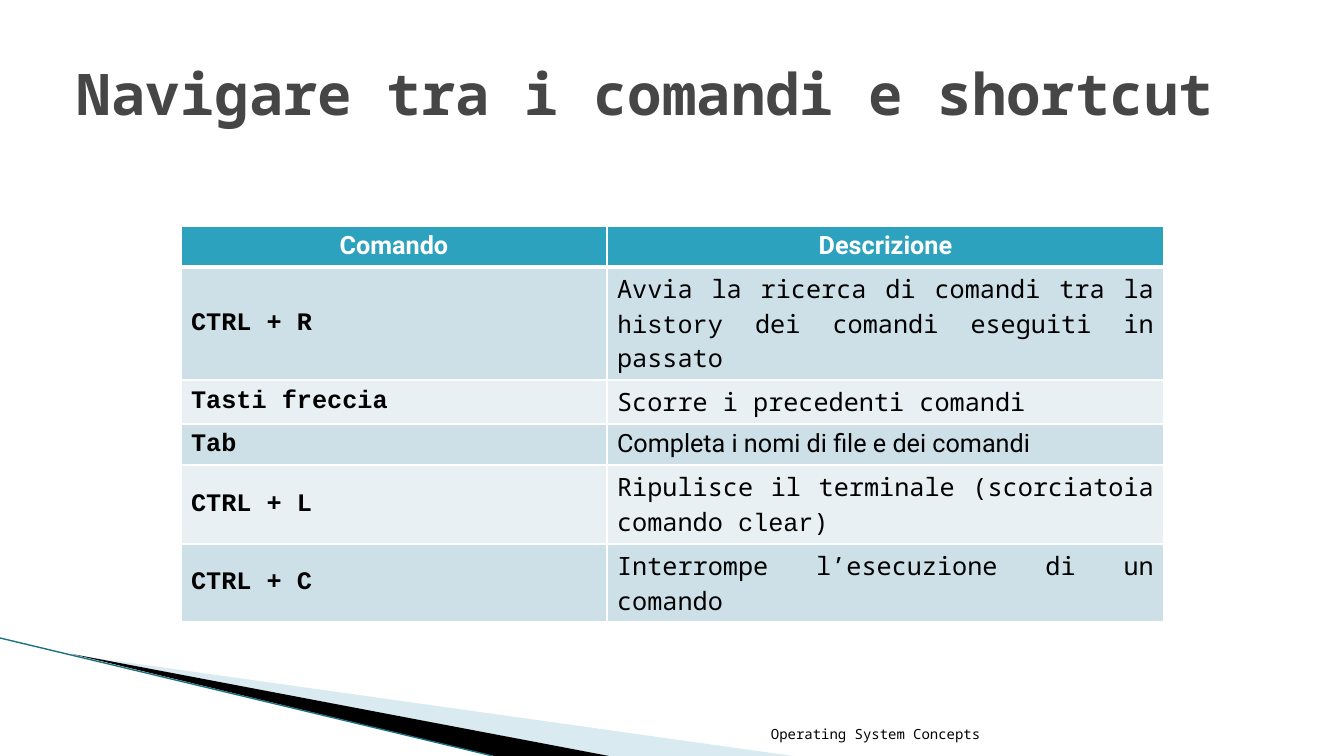
import pptx
import pptx.dml.color
import pptx.enum.shapes
import pptx.enum.text
import pptx.oxml
import pptx.oxml.ns
import pptx.util
from lxml import etree

RGB = pptx.dml.color.RGBColor
ALIGN = pptx.enum.text.PP_ALIGN
ANCHOR = pptx.enum.text.MSO_ANCHOR

WHITE = RGB(0xFF, 0xFF, 0xFF)
BLACK = RGB(0x00, 0x00, 0x00)
GREY = RGB(0x46, 0x46, 0x46)
TEAL = RGB(0x2D, 0xA2, 0xBF)
DARK_TEAL = RGB(0x1B, 0x70, 0x82)
PALE_BLUE = RGB(0xA0, 0xCB, 0xDC)
BANDS = [RGB(0xCD, 0xE0, 0xE8), RGB(0xE8, 0xF0, 0xF4)]

MONO, CODE, SANS = "Noto Sans Mono", "Courier New", "Roboto"
EMU_PER_PX = 914400 / 100.8

TITLE = dict(name=MONO, size=41, bold=True, color=GREY)
FOOTER = dict(name=MONO, size=10, bold=False, color=BLACK)
HEAD = dict(name=SANS, size=18, bold=True, color=WHITE)
KEY = dict(name=CODE, size=18, bold=True, color=BLACK)
TEXT = dict(name=MONO, size=18, bold=False, color=BLACK)
TEXT_CODE = dict(TEXT, name=CODE)
TEXT_SANS = dict(TEXT, name=SANS)

# Row height, shortcut, description runs, description alignment
SHORTCUTS = [
    (113, "CTRL + R", [("Avvia la ricerca di comandi tra la ", TEXT),
                       ("history", TEXT_CODE),
                       (" dei comandi eseguiti in passato", TEXT)], ALIGN.JUSTIFY),
    (44, "Tasti freccia", [("Scorre i precedenti comandi", TEXT)], ALIGN.JUSTIFY),
    (41, "Tab", [("Completa i nomi di file e dei comandi", TEXT_SANS)], ALIGN.LEFT),
    (79, "CTRL + L", [("Ripulisce il terminale (scorciatoia comando ", TEXT),
                      ("clear", TEXT_CODE), (")", TEXT)], ALIGN.JUSTIFY),
    (78, "CTRL + C", [("Interrompe l’esecuzione di un comando", TEXT)], ALIGN.JUSTIFY),
]


def px(n):
    return pptx.util.Emu(round(n * EMU_PER_PX))


def write(tf, runs, align):
    p = tf.paragraphs[0]
    p.alignment = align
    for text, fmt in runs:
        r = p.add_run()
        r.text = text
        for key, value in fmt.items():
            if key == "color":
                r.font.color.rgb = value
            else:
                setattr(r.font, key, pptx.util.Pt(value) if key == "size" else value)


def add_text(slide, box, text, fmt, align, anchor):
    tf = slide.shapes.add_textbox(*map(px, box)).text_frame
    tf.word_wrap = True
    tf.vertical_anchor = anchor
    write(tf, [(text, fmt)], align)


def add_wedge(slide, left, top, points, color, alpha=100):
    points = [(px(left + x), px(top + y)) for x, y in points]
    fb = slide.shapes.build_freeform(*points[0])
    fb.add_line_segments(points[1:], close=True)
    sp = fb.convert_to_shape()
    sp.shadow.inherit = False
    sp.fill.solid()
    sp.fill.fore_color.rgb = color
    sp.line.fill.background()
    clr = sp.fill._xPr.find(".//" + pptx.oxml.ns.qn("a:srgbClr"))
    etree.SubElement(clr, pptx.oxml.ns.qn("a:alpha"), val=str(alpha * 1000))


def add_corner(slide, left, top, width, height):
    # Pale and black wedges, then the thin edge line
    add_wedge(slide, left, top, [(74, 17), (width, height), (609, height)], PALE_BLUE, 40)
    add_wedge(slide, left, top, [(72, 16), (609, height), (493, height)], BLACK)
    cx = slide.shapes.add_connector(pptx.enum.shapes.MSO_CONNECTOR.STRAIGHT, px(left),
                                    px(top), px(left + 493), px(top + height))
    cx.line.color.rgb = DARK_TEAL
    cx.line.width = pptx.util.Pt(1)
    etree.SubElement(cx._element.spPr, pptx.oxml.ns.qn("a:effectLst"))


def style_cell(cell, fill, top, bottom):
    tcPr = cell._tc.get_or_add_tcPr()
    for side, width in dict(L=1, R=1, T=top, B=bottom).items():
        tcPr.append(pptx.oxml.parse_xml(
            f'<a:ln{side} {pptx.oxml.ns.nsdecls("a")} w="{pptx.util.Pt(width)}">'
            f'<a:solidFill><a:srgbClr val="{WHITE}"/></a:solidFill></a:ln{side}>'))
    cell.fill.solid()
    cell.fill.fore_color.rgb = fill


def add_shortcuts(slide, left, top, widths, head_height):
    heights = [head_height] + [row[0] for row in SHORTCUTS]
    table = slide.shapes.add_table(len(heights), len(widths), px(left), px(top),
                                   px(sum(widths)), px(sum(heights))).table
    for column, width in zip(table.columns, widths):
        column.width = px(width)
    for row, height in zip(table.rows, heights):
        row.height = px(height)
    # Header
    for cell, text in zip(table.rows[0].cells, ["Comando", "Descrizione"]):
        style_cell(cell, TEAL, 1, 3)
        write(cell.text_frame, [(text, HEAD)], ALIGN.CENTER)
    # Shortcut rows
    for i, (_, keys, runs, align) in enumerate(SHORTCUTS):
        key_cell, text_cell = table.rows[i + 1].cells
        for cell in (key_cell, text_cell):
            style_cell(cell, BANDS[i % 2], 1 if i else 3, 1)
        key_cell.vertical_anchor = ANCHOR.MIDDLE
        write(key_cell.text_frame, [(keys, KEY)], ALIGN.LEFT)
        write(text_cell.text_frame, runs, align)


def main():
    prs = pptx.Presentation()
    prs.slide_width, prs.slide_height = px(1344), px(756)
    slide = prs.slides.add_slide(prs.slide_layouts[6])
    add_corner(slide, 0, 638, 793, 118)
    add_text(slide, (644, 707, 346, 40), "Operating System Concepts", FOOTER,
             ALIGN.RIGHT, ANCHOR.BOTTOM)
    add_text(slide, (67, 30, 1210, 126), "Navigare tra i comandi e shortcut", TITLE,
             ALIGN.LEFT, ANCHOR.MIDDLE)
    add_shortcuts(slide, 181, 226, [426, 557], 41)
    prs.save("out.pptx")


if __name__ == "__main__":
    main()
